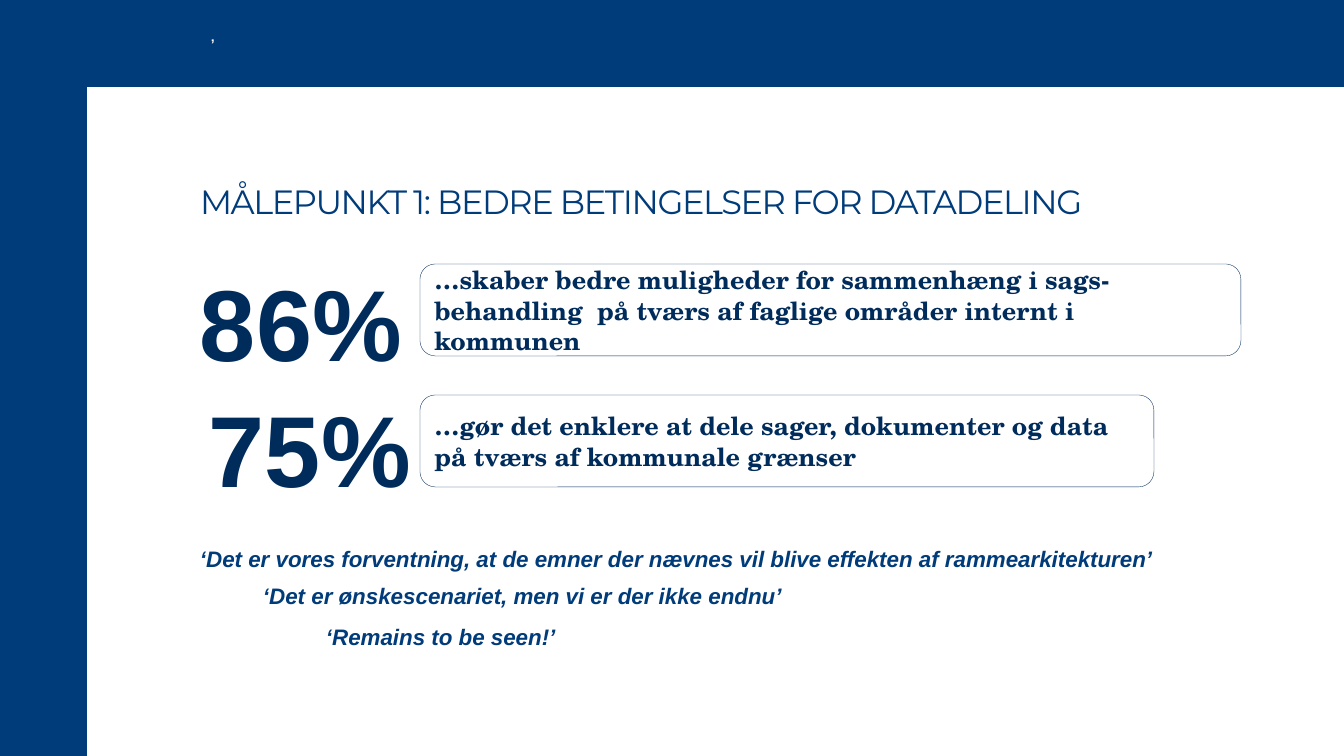
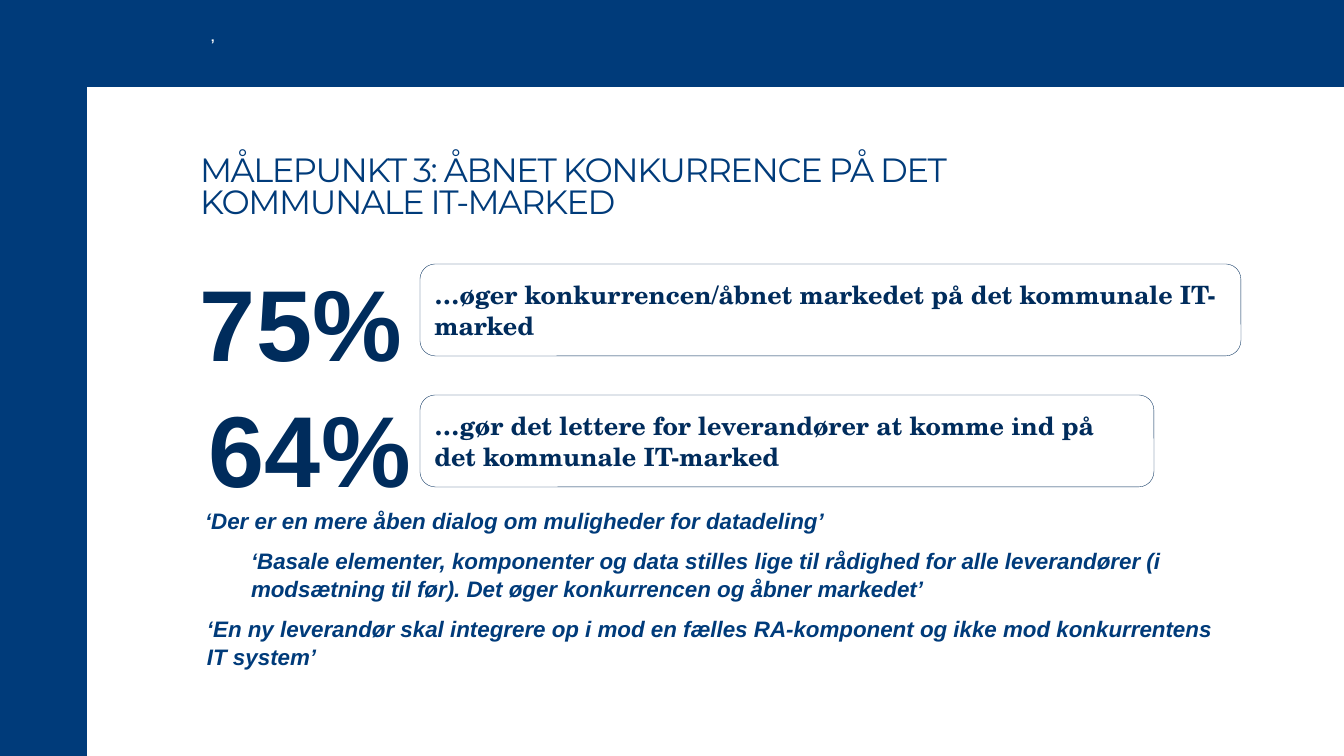
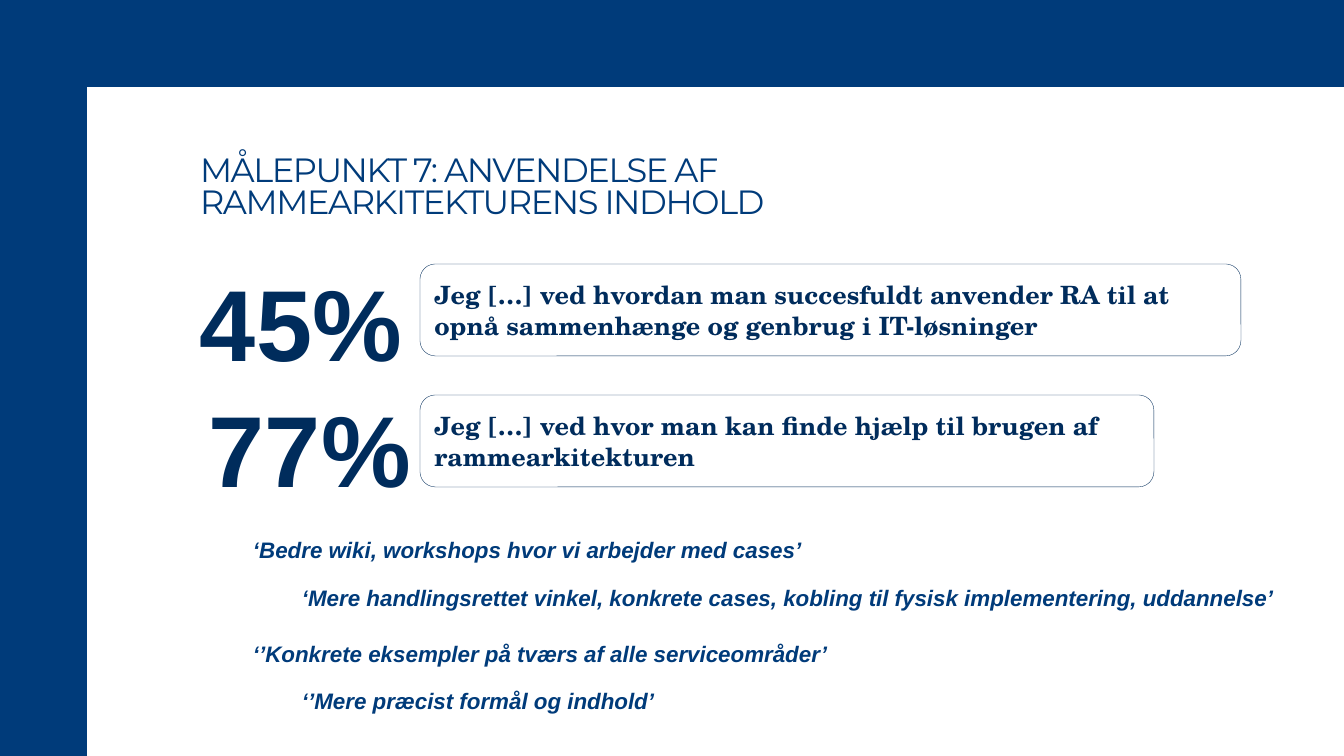
from dataclasses import dataclass

from pptx import Presentation
from pptx.dml.color import RGBColor
from pptx.enum.shapes import MSO_SHAPE as Shape
from pptx.enum.text import MSO_ANCHOR as Anchor, MSO_AUTO_SIZE as AutoSize, PP_ALIGN as Align
from pptx.util import Pt

SCALE = 914400 / 100.8
WIDTH, HEIGHT, BAND = 1344, 756, 87


def px(n):
    """Turn px into EMU."""
    return round(n * SCALE)


@dataclass(frozen=True)
class Style:
    """Typeface, size, colour and emphasis of a text."""
    name: str
    size: int
    color: str
    bold: bool = False
    italic: bool = False
    spacing: float = 1.0


class Theme:
    """Colours and type styles of the deck."""
    BLUE, NAVY, OUTLINE, WHITE = "003B7A", "002C5C", "002C5A", "FFFFFF"
    TITLE = Style("Montserrat", 24, BLUE, spacing=0.8)
    MARK = Style("Arial", 10, WHITE, bold=True)
    NUMBER = Style("Arial", 72, NAVY, bold=True, spacing=1.04)
    CLAIM = Style("TeX Gyre Schola", 18, NAVY, bold=True)
    QUOTE = Style("Arial", 16, BLUE, bold=True, italic=True, spacing=1.04)


class Deck:
    """A presentation in one style, with its current slide."""

    def __init__(self):
        """Open an empty wide presentation."""
        self.prs = Presentation()
        self.prs.slide_width, self.prs.slide_height = px(WIDTH), px(HEIGHT)
        self.layout = self.prs.slide_layouts[5]
        self.slide = None

    def set_lines(self, tf, lines, style):
        """Fill a text frame with one left-aligned paragraph per line."""
        for i, line in enumerate(lines):
            p = tf.add_paragraph() if i else tf.paragraphs[0]
            p.text = line
            p.alignment = Align.LEFT
            p.line_spacing = style.spacing
            f = p.font
            f.name, f.size = style.name, Pt(style.size)
            f.bold, f.italic = style.bold, style.italic
            f.color.rgb = RGBColor.from_string(style.color)

    def no_insets(self, tf):
        """Remove the inner margins of a text frame."""
        tf.margin_left = tf.margin_top = tf.margin_right = tf.margin_bottom = 0

    def frame(self):
        """Put the blue corner band on the layout."""
        fb = self.slide.shapes.build_freeform(WIDTH, BAND, scale=SCALE)
        fb.add_line_segments([(WIDTH, 0), (0, 0), (0, HEIGHT), (BAND, HEIGHT), (BAND, BAND)])
        sp = fb.convert_to_shape()
        sp.shadow.inherit = False
        sp.fill.solid()
        sp.fill.fore_color.rgb = RGBColor.from_string(Theme.BLUE)
        sp.line.fill.background()
        self.layout.shapes.element.insert(2, sp.element)

    def new_slide(self, title):
        """Start a slide with its title."""
        self.slide = self.prs.slides.add_slide(self.layout)
        if len(self.prs.slides) == 1:
            self.frame()
        sp = self.slide.shapes.title
        sp.left, sp.top, sp.width, sp.height = map(px, (200, 128, 901, 93))
        tf = sp.text_frame
        self.no_insets(tf)
        tf.word_wrap, tf.auto_size = True, AutoSize.NONE
        tf.vertical_anchor = Anchor.BOTTOM
        self.set_lines(tf, [title], Theme.TITLE)
        tf.paragraphs[0].runs[0].font._element.set("spc", "-100")

    def text(self, x, y, w, h, lines, style):
        """Add a text box that fits its unwrapped lines."""
        tf = self.slide.shapes.add_textbox(*map(px, (x, y, w, h))).text_frame
        self.no_insets(tf)
        tf.word_wrap, tf.auto_size = False, AutoSize.SHAPE_TO_FIT_TEXT
        self.set_lines(tf, lines, style)

    def mark(self):
        """Add the small white mark in the top band."""
        tf = self.slide.shapes.add_textbox(*map(px, (211, 0, 1005, BAND))).text_frame
        self.no_insets(tf)
        tf.word_wrap, tf.vertical_anchor = True, Anchor.MIDDLE
        self.set_lines(tf, ["’"], Theme.MARK)

    def claim(self, y, w, line):
        """Add a rounded outline box holding a claim."""
        sp = self.slide.shapes.add_shape(Shape.ROUNDED_RECTANGLE, *map(px, (420, y, w, 92)))
        sp.shadow.inherit = False
        sp.fill.background()
        sp.line.color.rgb = RGBColor.from_string(Theme.OUTLINE)
        sp.line.width = Pt(0.25)
        tf = sp.text_frame
        tf.word_wrap, tf.vertical_anchor = True, Anchor.MIDDLE
        self.set_lines(tf, [line], Theme.CLAIM)

    def stats(self, stats):
        """Add the two percentages with their claims."""
        places = ((200, 256, 264, 821), (209, 382, 395, 734))
        for (x, y, box_y, box_w), (number, line) in zip(places, stats):
            self.claim(box_y, box_w, line)
            self.text(x, y, 204, 127, [number], Theme.NUMBER)

    def quote(self, x, y, w, *lines):
        """Add a quotation."""
        self.text(x, y, w, 28 * len(lines), lines, Theme.QUOTE)


SLIDES = [
    ("MÅLEPUNKT 1: BEDRE BETINGELSER FOR DATADELING", True,
     [("86%", "…skaber bedre muligheder for sammenhæng i sags-behandling  på tværs af "
              "faglige områder internt i kommunen"),
      ("75%", "…gør det enklere at dele sager, dokumenter og data på tværs af kommunale grænser")],
     [(200, 544, 965, "‘Det er vores forventning, at de emner der nævnes vil blive effekten af "
                      "rammearkitekturen’"),
      (263, 581, 525, "‘Det er ønskescenariet, men vi er der ikke endnu’"),
      (326, 622, 232, "‘Remains to be seen!’")]),
    ("MÅLEPUNKT 3: ÅBNET KONKURRENCE PÅ DET KOMMUNALE IT-MARKED", True,
     [("75%", "…øger konkurrencen/åbnet markedet på det kommunale IT-marked"),
      ("64%", "…gør det lettere for leverandører at komme ind på det kommunale IT-marked")],
     [(205, 506, 628, "‘Der er en mere åben dialog om muligheder for datadeling’"),
      (251, 546, 922, "‘Basale elementer, komponenter og data stilles lige til rådighed for alle "
                      "leverandører (i",
       "modsætning til før). Det øger konkurrencen og åbner markedet’"),
      (207, 614, 1012, "‘En ny leverandør skal integrere op i mod en fælles RA-komponent og ikke "
                       "mod konkurrentens",
       "IT system’")]),
    ("MÅLEPUNKT 7: ANVENDELSE AF RAMMEARKITEKTURENS INDHOLD", False,
     [("45%", "Jeg […] ved hvordan man succesfuldt anvender RA til at opnå sammenhænge og "
              "genbrug i IT-løsninger"),
      ("77%", "Jeg […] ved hvor man kan finde hjælp til brugen af rammearkitekturen")],
     [(253, 535, 556, "‘Bedre wiki, workshops hvor vi arbejder med cases’"),
      (302, 583, 986, "‘Mere handlingsrettet vinkel, konkrete cases, kobling til fysisk "
                      "implementering, uddannelse’"),
      (253, 639, 583, "‘’Konkrete eksempler på tværs af alle serviceområder’"),
      (302, 686, 357, "‘’Mere præcist formål og indhold’")]),
]


def main():
    """Build and save the deck."""
    deck = Deck()
    for title, marked, stats, quotes in SLIDES:
        deck.new_slide(title)
        if marked:
            deck.mark()
        deck.stats(stats)
        for quote in quotes:
            deck.quote(*quote)
    deck.prs.save("out.pptx")


if __name__ == "__main__":
    main()
